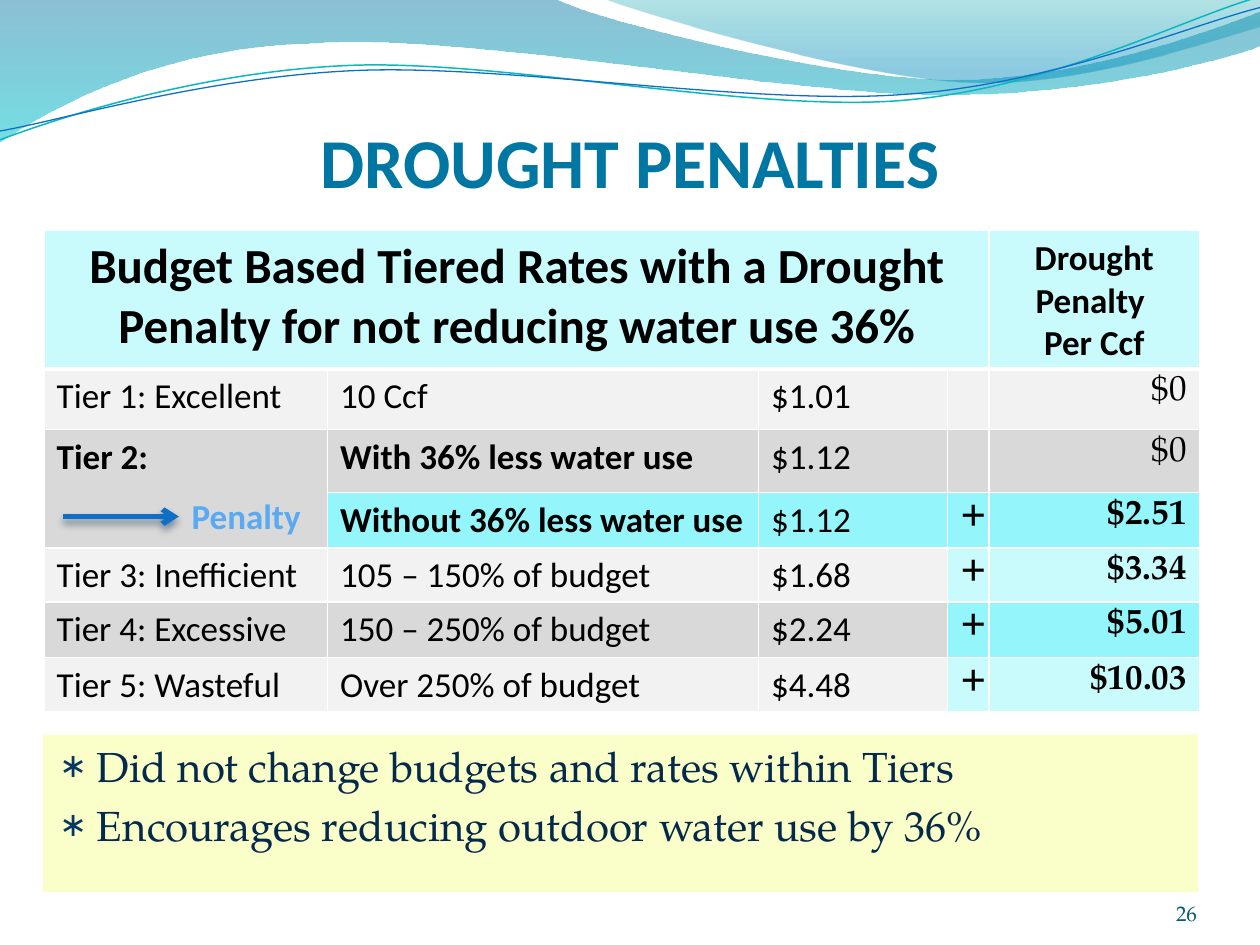
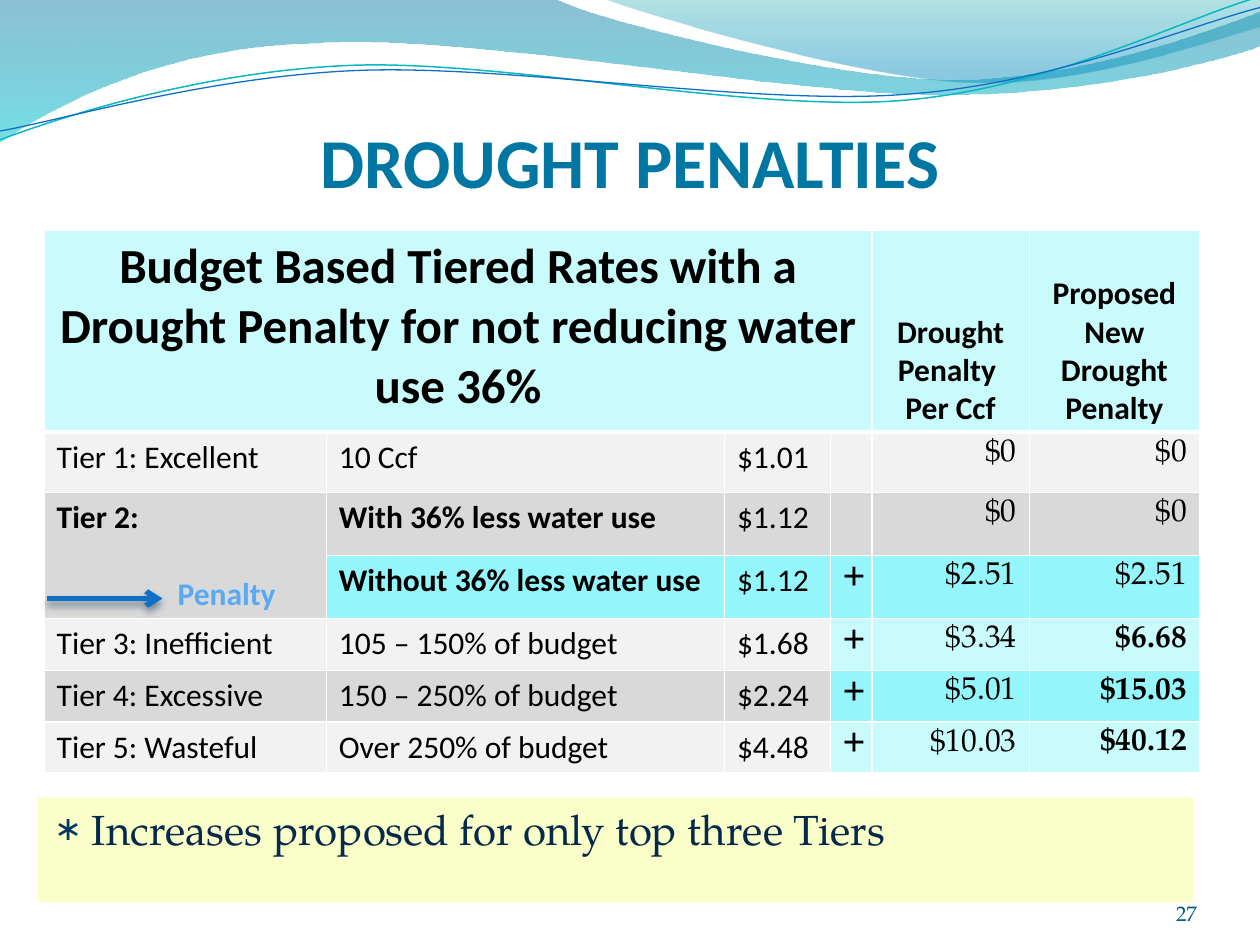
from dataclasses import dataclass
from lxml.etree import SubElement
from pptx import Presentation
from pptx.dml.color import RGBColor
from pptx.enum.shapes import MSO_CONNECTOR, MSO_SHAPE
from pptx.enum.text import MSO_ANCHOR, PP_ALIGN
from pptx.oxml.ns import qn
from pptx.util import Inches, Pt


@dataclass(frozen=True)
class Theme:
    sans: str = "Calibri"
    serif: str = "TeX Gyre Pagella"
    title: str = "0076A3"
    page: str = "045D75"
    note: str = "05294A"
    bullet: str = "073763"
    cream: str = "FAFEC8"
    ink: str = "000000"
    link: str = "59AAF2"
    blue: str = "0F6FC6"
    teal: str = "0AB8BF"
    shade: str = "042747"
    white: str = "FFFFFF"
    aqua: str = "C9FAFC"
    cyan: str = "94F5FA"
    pale: str = "F2F2F2"
    grey: str = "D9D9D9"
    title_pt: int = 40
    head_pt: int = 28
    note_pt: int = 24
    page_pt: int = 12


T = Theme()

TITLE = "DROUGHT PENALTIES"
HEAD = "Budget Based Tiered Rates with a Drought Penalty for not reducing water use 36%"
PER_CCF = ["Drought Penalty ", "Per Ccf"]
TIERS = [
    ("Tier 1: Excellent", "10 Ccf", "$1.01", "", "$0", "$0"),
    ("Tier 2:", "With 36% less water use", "$1.12", "", "$0", "$0"),
    ("", "Without 36% less water use", "$1.12", "+", "$2.51", "$2.51"),
    ("Tier 3: Inefficient", "105 – 150% of budget", "$1.68", "+", "$3.34", "$6.68"),
    ("Tier 4: Excessive", "150 – 250% of budget", "$2.24", "+", "$5.01", "$15.03"),
    ("Tier 5: Wasteful", "Over 250% of budget", "$4.48", "+", "$10.03", "$40.12"),
]
FILLS = [(T.pale, T.pale), (T.grey, T.grey), (T.cyan, T.cyan),
         (T.pale, T.aqua), (T.grey, T.cyan), (T.pale, T.aqua)]
STRONG = {(2, 0), (2, 1), (3, 1)}

PAGES = [
    dict(number="26", cols=[2.25, 3.42, 1.5, 0.33, 1.67],
         rows=[1.1, 0.48, 0.5, 0.44, 0.43, 0.44, 0.43],
         heads=[PER_CCF], head_pt=20, body_pt=20, bold={4: 3},
         gap=10, indent=1.07, arrow=(0.5, 4.1), box=(0.34, 5.83, 9.17, 1.25),
         notes=["Did not change budgets and rates within Tiers",
                "Encourages reducing outdoor water use by 36%"]),
    dict(number="27", cols=[2.24, 3.16, 0.84, 0.33, 1.25, 1.35],
         rows=[1.6, 0.48, 0.5, 0.5, 0.41, 0.41, 0.4],
         heads=[PER_CCF, ["Proposed New Drought Penalty"]],
         head_pt=18, body_pt=18, bold={5: 4},
         gap=22, indent=0.96, arrow=(0.37, 4.75), box=(0.3, 6.33, 9.17, 0.83),
         notes=["Increases proposed for only top three Tiers"]),
]

BANDS = [
    ([(0, 0), (4.4, -0.01), (4.76, 0.17, 6.64, 0.63, 7.58, 0.63),
      (8.53, 0.63, 9.58, 0.26, 10, 0.09), (10.01, 0.36),
      (9.83, 0.44, 8.7, 0.76, 7.46, 0.75), (6.22, 0.75, 3.82, 0.28, 2.57, 0.34),
      (1.29, 0.36, 0.46, 0.83, -0.01, 1.13), (0, 0)],
     [(0, "0074A1", 45), (100, "00C6CF", 55)]),
    ([(4.79, -0.01), (5.09, 0.11, 6.82, 0.62, 7.69, 0.65),
      (8.56, 0.69, 9.61, 0.32, 10, 0.21), (10, 0), (4.79, -0.01)],
     [(0, "00A1A9", 30), (80, "008BBF", 45)]),
]
WAVES = [
    ([(0, 1.11), (0.48, 0.93, 1.58, 0.57, 2.77, 0.52),
      (3.95, 0.47, 5.93, 0.89, 7.13, 0.8), (8.33, 0.71, 9.38, 0.15, 9.98, -0.02)],
     T.teal, 0.85),
    ([(0, 1.04), (0.47, 0.96, 1.64, 0.61, 2.83, 0.56),
      (4.03, 0.51, 5.97, 0.84, 7.17, 0.75), (8.36, 0.67, 9.41, 0.21, 10, 0.06)],
     T.blue, 0.75),
]


def rgb(code):
    return RGBColor.from_string(code)


def node(parent, tag, **attrs):
    return SubElement(parent, qn("a:" + tag), {k: str(v) for k, v in attrs.items()})


def tint(parent, code, alpha=100):
    color = node(parent, "srgbClr", val=code)
    if alpha < 100:
        node(color, "alpha", val=alpha * 1000)


def write(par, text, font, size, color, bold=False, align=None):
    par.alignment = align
    run = par.add_run()
    run.text = text
    run.font.name = font
    run.font.size = Pt(size)
    run.font.bold = bold
    run.font.color.rgb = rgb(color)


def next_par(frame, index):
    return frame.add_paragraph() if index else frame.paragraphs[0]


def outline(slide, parts, close):
    points = [(Inches(part[i]), Inches(part[i + 1]))
              for part in parts for i in range(0, len(part), 2)]
    build = slide.shapes.build_freeform(*points[0])
    build.add_line_segments(points[1:], close=close)
    shape = build.convert_to_shape()
    shape.shadow.inherit = False
    lines = iter(list(shape._element.iter(qn("a:lnTo"))))
    for part in parts[1:]:
        first = next(lines)
        if len(part) == 6:
            curve = node(first.getparent(), "cubicBezTo")
            first.addprevious(curve)
            for line in (first, next(lines), next(lines)):
                curve.append(line[0])
                line.getparent().remove(line)
    return shape


def add_waves(slide):
    for parts, stops in BANDS:
        band = outline(slide, parts, True)
        band.line.fill.background()
        band.fill.gradient()
        grad = band.fill._xPr.find(qn("a:gradFill"))
        for child in list(grad):
            grad.remove(child)
        group = node(grad, "gsLst")
        for place, code, alpha in stops:
            tint(node(group, "gs", pos=place * 1000), code, alpha)
        node(grad, "lin", ang=5400000, scaled=0)
    for parts, code, width in WAVES:
        wave = outline(slide, parts, False)
        wave.fill.background()
        wave.line.color.rgb = rgb(code)
        wave.line.width = Pt(width)


def add_label(slide, place, text, font, size, color, bold, align):
    frame = slide.shapes.add_textbox(*map(Inches, place)).text_frame
    frame.word_wrap = True
    write(frame.paragraphs[0], text, font, size, color, bold, align)
    return frame


def add_frame(slide, number):
    add_waves(slide)
    add_label(slide, (0.5, 0.89, 9, 0.77), TITLE, T.sans, T.title_pt,
              T.title, True, PP_ALIGN.CENTER)
    foot = add_label(slide, (8.67, 6.95, 0.83, 0.4), number, T.serif, T.page_pt,
                     T.page, False, PP_ALIGN.RIGHT)
    foot.margin_left = foot.margin_right = foot.margin_top = foot.margin_bottom = 0
    foot.vertical_anchor = MSO_ANCHOR.BOTTOM


def dress(cell, fill, top, bottom, rule):
    cell.margin_top, cell.margin_bottom = Inches(top), Inches(bottom)
    props = cell._tc.get_or_add_tcPr()
    for side in ("lnL", "lnR", "lnT", "lnB"):
        width = rule if side == "lnB" else 1
        line = node(props, side, w=Pt(width))
        tint(node(line, "solidFill"), T.white)
    cell.fill.solid()
    cell.fill.fore_color.rgb = rgb(fill)


def fill_head(table, page):
    for col in range(len(page["cols"])):
        dress(table.cell(0, col), T.aqua, 0.05, 0.03, 3)
    write(table.cell(0, 0).text_frame.paragraphs[0], HEAD, T.sans, T.head_pt,
          T.ink, True, PP_ALIGN.CENTER)
    for col, lines in enumerate(page["heads"], 4):
        cell = table.cell(0, col)
        cell.vertical_anchor = MSO_ANCHOR.BOTTOM
        for index, text in enumerate(lines):
            write(next_par(cell.text_frame, index), text, T.sans,
                  page["head_pt"], T.ink, True, PP_ALIGN.CENTER)


def fill_body(table, page):
    size = page["body_pt"]
    for row, (tier, fills) in enumerate(zip(TIERS, FILLS), 1):
        for col in range(len(page["cols"])):
            cell = table.cell(row, col)
            serif = col > 2
            fill = T.grey if (row, col) == (3, 0) else fills[serif]
            dress(cell, fill, 0.05, 0 if serif else 0.04, 1)
            bold = (row, col) in STRONG or col == 3 or row >= page["bold"].get(col, 9)
            if tier[col]:
                write(cell.text_frame.paragraphs[0], tier[col],
                      T.serif if serif else T.sans, size, T.ink, bold,
                      PP_ALIGN.RIGHT if col > 3 else PP_ALIGN.LEFT)


def add_rates(slide, page):
    cols, rows = page["cols"], page["rows"]
    place = map(Inches, (0.35, 1.83, sum(cols), sum(rows)))
    table = slide.shapes.add_table(len(rows), len(cols), *place).table
    table.first_row = table.horz_banding = False
    for col, width in zip(table.columns, cols):
        col.width = Inches(width)
    for row, height in zip(table.rows, rows):
        row.height = Inches(height)
    fill_head(table, page)
    fill_body(table, page)
    table.cell(0, 0).merge(table.cell(0, 3))
    tier = table.cell(2, 0)
    tier.merge(table.cell(3, 0))
    tier.margin_bottom = 0
    par = tier.text_frame.add_paragraph()
    par.space_before = Pt(page["gap"])
    par._p.get_or_add_pPr().set("marL", str(Inches(page["indent"])))
    write(par, "Penalty", T.sans, page["body_pt"], T.link, True)


def add_arrow(slide, left, top):
    arrow = slide.shapes.add_connector(
        MSO_CONNECTOR.STRAIGHT, *map(Inches, (left, top, left + 0.92, top)))
    arrow.line.color.rgb = rgb(T.blue)
    arrow.line.width = Pt(3)
    node(arrow.line._get_or_add_ln(), "tailEnd", type="arrow")
    effects = node(arrow._element.spPr, "effectLst")
    shadow = node(effects, "outerShdw", blurRad=Pt(4.5), dist=Pt(3),
                  dir=5400000, rotWithShape=0)
    tint(shadow, T.shade, 48)


def add_notes(slide, place, notes):
    box = slide.shapes.add_shape(MSO_SHAPE.RECTANGLE, *map(Inches, place))
    box.shadow.inherit = False
    box.fill.solid()
    box.fill.fore_color.rgb = rgb(T.cream)
    box.line.fill.background()
    frame = box.text_frame
    frame.word_wrap = True
    frame.margin_left = Inches(0.13)
    frame.vertical_anchor = MSO_ANCHOR.TOP
    for index, text in enumerate(notes):
        par = next_par(frame, index)
        write(par, text, T.serif, T.note_pt, T.note, align=PP_ALIGN.LEFT)
        par.space_before = Pt(0.2 * T.note_pt)
        props = par._p.get_or_add_pPr()
        props.set("marL", str(Inches(0.3)))
        props.set("indent", str(Inches(-0.3)))
        tint(node(props, "buClr"), T.bullet)
        node(props, "buSzPct", val=80000)
        node(props, "buFont", typeface=T.sans)
        node(props, "buChar", char="∗")


def main():
    deck = Presentation()
    deck.slide_width, deck.slide_height = Inches(10), Inches(7.5)
    for page in PAGES:
        slide = deck.slides.add_slide(deck.slide_layouts[6])
        add_frame(slide, page["number"])
        add_rates(slide, page)
        add_arrow(slide, *page["arrow"])
        add_notes(slide, page["box"], page["notes"])
    deck.save("out.pptx")


if __name__ == "__main__":
    main()
